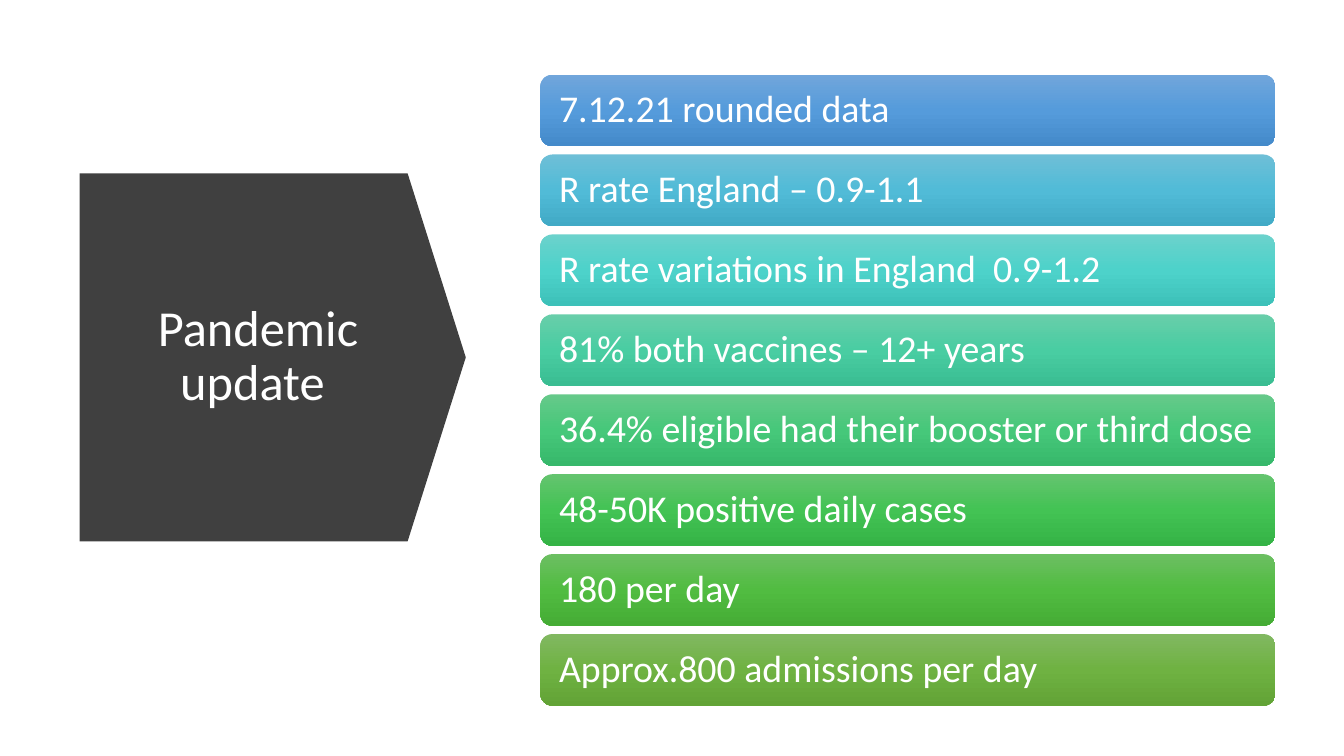
"""Build the pandemic update slide: a title arrow beside a column of facts."""
from copy import deepcopy
from dataclasses import dataclass

from pptx import Presentation
from pptx import util as u
from pptx.dml.color import RGBColor
from pptx.enum import shapes, text


@dataclass(frozen=True)
class Theme:
    """Colours, font and type sizes of the slide."""
    arrow: str = "404040"
    words: str = "FFFFFF"
    font: str = "Calibri"
    title_size: int = 36
    fact_size: int = 27


THEME = Theme()
SLIDE_WIDTH, SLIDE_HEIGHT = 13.33, 7.5
FIRST_TOP, LAST_TOP = 0.74, 6.29
BAR_LEFT, BAR_WIDTH, BAR_HEIGHT = 5.36, 7.29, 0.71
FACTS = [
    ("7.12.21 rounded data", ("71A6DB", "559BDB", "448ACA")),
    ("R rate England – 0.9-1.1", ("6EBFD7", "51BBD7", "41AAC6")),
    ("R rate variations in England  0.9-1.2", ("6BD2CC", "4DD2CA", "3DC1B9")),
    ("81% both vaccines – 12+ years", ("68CEAA", "49CDA2", "3ABD92")),
    ("36.4% eligible had their booster or third dose", ("66C98A", "46C87A", "37B86B")),
    ("48-50K positive daily cases", ("64C46F", "43C354", "35B346")),
    ("180 per day", ("6CBF62", "51BC41", "45AC35")),
    ("Approx.800 admissions per day", ("81B861", "6FB242", "62A336")),
]


def set_format(target, values):
    """Set each attribute named in a dict of format values."""
    for name, value in values.items():
        setattr(target, name, value)


def write(shape, words, size, alignment, inset):
    """Write one formatted paragraph in the middle of a shape."""
    frame = shape.text_frame
    set_format(frame, {
        "text": words,
        "word_wrap": True,
        "auto_size": text.MSO_AUTO_SIZE.NONE,
        "vertical_anchor": text.MSO_ANCHOR.MIDDLE,
        "margin_left": u.Inches(inset),
        "margin_right": u.Inches(inset),
    })
    paragraph = frame.paragraphs[0]
    set_format(paragraph, {"alignment": alignment, "line_spacing": 0.9})
    font = paragraph.runs[0].font
    set_format(font, {"name": THEME.font, "size": u.Pt(size)})
    font.color.rgb = RGBColor.from_string(THEME.words)


def add_plain_shape(parent, kind, box):
    """Add a preset shape without outline or shadow."""
    shape = parent.add_shape(kind, *map(u.Inches, box))
    shape.line.fill.background()
    shape.shadow.inherit = False
    return shape


def fill_gradient(shape, colours):
    """Fill a shape from top to bottom with evenly spaced colours."""
    shape.fill.gradient()
    shape.fill.gradient_angle = 270
    stop_list = shape.fill._xPr.gradFill.gsLst
    while len(stop_list) < len(colours):
        stop_list.append(deepcopy(stop_list[0]))
    for index, (stop, colour) in enumerate(zip(shape.fill.gradient_stops, colours)):
        stop.position = index / (len(colours) - 1)
        stop.color.rgb = RGBColor.from_string(colour)


def add_title_arrow(slide, words):
    """Place the title over an arrow that points right."""
    title = slide.shapes.title
    arrow = add_plain_shape(slide.shapes, shapes.MSO_SHAPE.DOWN_ARROW, (0.88, 1.63, 3.65, 3.83))
    arrow.rotation = 270
    arrow.adjustments[0], arrow.adjustments[1] = 1, 0.158
    arrow.fill.solid()
    arrow.fill.fore_color.rgb = RGBColor.from_string(THEME.arrow)
    title._element.addprevious(arrow._element)
    set_format(title, {
        "left": u.Inches(1.12), "top": u.Inches(2.15),
        "width": u.Inches(2.88), "height": u.Inches(2.79),
    })
    write(title, words, THEME.title_size, text.PP_ALIGN.CENTER, 0.1)


def add_facts(slide, facts):
    """Stack the facts as evenly spaced bars in one group."""
    group = slide.shapes.add_group_shape()
    step = (LAST_TOP - FIRST_TOP) / (len(facts) - 1)
    for row, (words, colours) in enumerate(facts):
        box = (BAR_LEFT, FIRST_TOP + row * step, BAR_WIDTH, BAR_HEIGHT)
        bar = add_plain_shape(group.shapes, shapes.MSO_SHAPE.ROUNDED_RECTANGLE, box)
        fill_gradient(bar, colours)
        write(bar, words, THEME.fact_size, text.PP_ALIGN.LEFT, 0.15)


def main():
    """Build and save the presentation."""
    presentation = Presentation()
    presentation.slide_width = u.Inches(SLIDE_WIDTH)
    presentation.slide_height = u.Inches(SLIDE_HEIGHT)
    slide = presentation.slides.add_slide(presentation.slide_layouts.get_by_name("Title Only"))
    add_title_arrow(slide, "Pandemic update ")
    add_facts(slide, FACTS)
    presentation.save("out.pptx")


if __name__ == "__main__":
    main()
